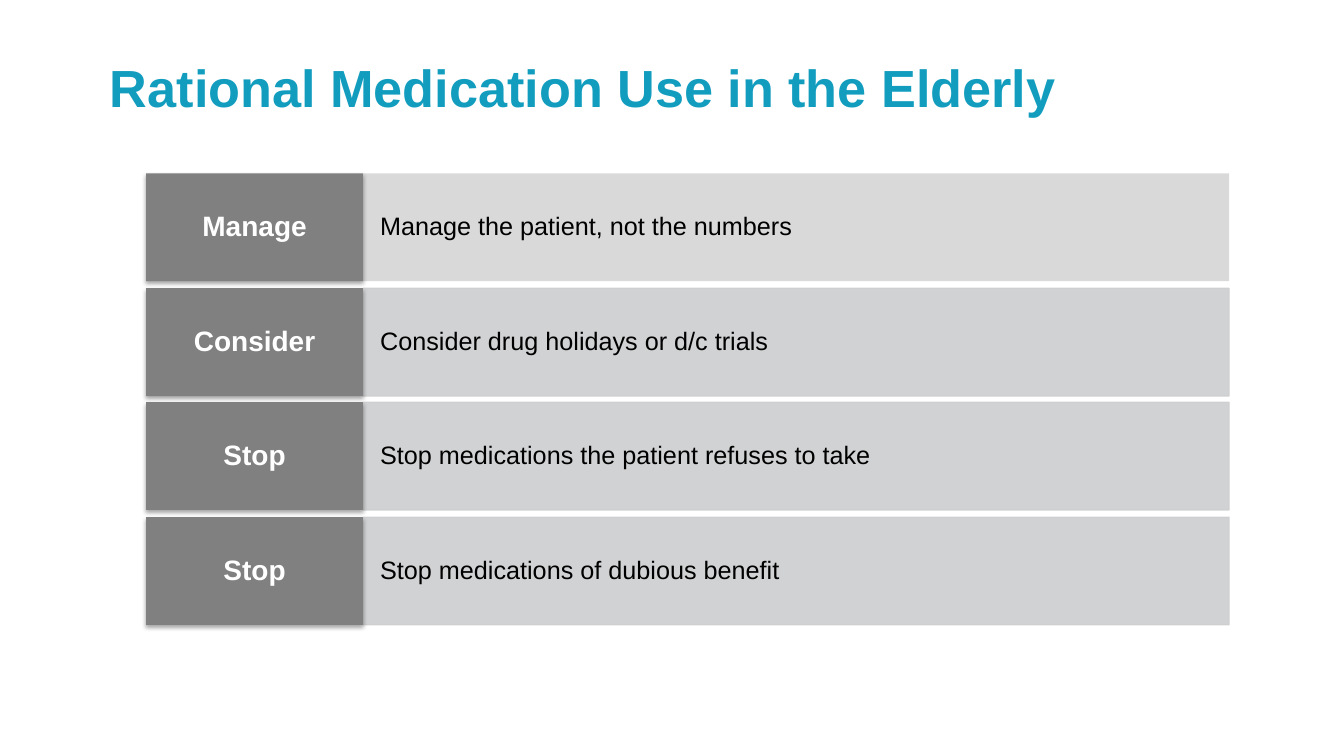
from lxml import etree
from pptx import Presentation
from pptx import util as u
from pptx.dml.color import RGBColor
from pptx.enum import shapes, text
from pptx.oxml import ns

PX = 9144
TEAL = RGBColor(0x12, 0x9D, 0xBF)
GRAY = RGBColor(0x80, 0x80, 0x80)
LIGHT = RGBColor(0xD9, 0xD9, 0xD9)
SILVER = RGBColor(0xCD, 0xCE, 0xCF)
WHITE = RGBColor(0xFF, 0xFF, 0xFF)
BLACK = RGBColor(0, 0, 0)

LABEL_LEFT, LABEL_WIDTH = 145, 215
BAND_LEFT, BAND_WIDTH = 360, 859
ROWS_TOP, ROWS_SPAN, ROW_HEIGHT = 172, 341, 107

TITLE_FONT = {"name": "Arial", "size": u.Pt(37.3), "bold": True}
LABEL_FONT = {"name": "Arial", "size": u.Pt(20), "bold": True}
BAND_FONT = {"name": "Arial", "size": u.Pt(18), "bold": False}

ROWS = [
    ("Manage", "Manage the patient, not the numbers"),
    ("Consider", "Consider drug holidays or d/c trials"),
    ("Stop", "Stop medications the patient refuses to take"),
    ("Stop", "Stop medications of dubious benefit"),
]


def place(s, left, top, width, height):
    box = {"left": left, "top": top, "width": width, "height": height}
    for name, value in box.items():
        setattr(s, name, value * PX)


def write(s, words, font, color, align, inset_x, inset_y):
    tf = s.text_frame
    frame = {
        "word_wrap": True,
        "auto_size": text.MSO_AUTO_SIZE.NONE,
        "vertical_anchor": text.MSO_ANCHOR.MIDDLE,
        "margin_left": inset_x * PX,
        "margin_right": inset_x * PX,
        "margin_top": inset_y * PX,
        "margin_bottom": inset_y * PX,
    }
    for name, value in frame.items():
        setattr(tf, name, value)
    p = tf.paragraphs[0]
    p.alignment = align
    p.line_spacing = 0.9
    r = p.add_run()
    r.text = words
    for name, value in font.items():
        setattr(r.font, name, value)
    r.font.color.rgb = color


def add_rect(slide, left, top, width, fill):
    s = slide.shapes.add_shape(
        shapes.MSO_SHAPE.RECTANGLE,
        left * PX, top * PX, width * PX, ROW_HEIGHT * PX)
    s.shadow.inherit = False
    s.fill.solid()
    s.fill.fore_color.rgb = fill
    s.line.fill.background()
    return s


def set_alpha(color, percent):
    alpha = etree.SubElement(color, ns.qn("a:alpha"))
    alpha.set("val", str(percent * 1000))


def add_drop_shadow(s):
    effects = s._element.spPr.find(ns.qn("a:effectLst"))
    shadow = etree.SubElement(
        effects, ns.qn("a:outerShdw"), blurRad=str(u.Pt(3.1)),
        dist=str(u.Pt(1.8)), dir="5400000", rotWithShape="0")
    color = etree.SubElement(shadow, ns.qn("a:srgbClr"), val=str(BLACK))
    set_alpha(color, 35)


def add_title(slide, words):
    s = slide.shapes.title
    place(s, 99, 23, 1185, 134)
    write(s, words, TITLE_FONT, TEAL, text.PP_ALIGN.LEFT, 10, 0)


def add_band(slide, top, words, outlined):
    s = add_rect(slide, BAND_LEFT, top, BAND_WIDTH,
                 SILVER if outlined else LIGHT)
    if outlined:
        s.line.color.rgb = SILVER
        s.line.width = u.Pt(0.75)
        for color in s._element.spPr.iter(ns.qn("a:srgbClr")):
            set_alpha(color, 90)
    write(s, words, BAND_FONT, BLACK, text.PP_ALIGN.LEFT, 17, 27)


def add_label(slide, top, words):
    s = add_rect(slide, LABEL_LEFT, top, LABEL_WIDTH, GRAY)
    add_drop_shadow(s)
    write(s, words, LABEL_FONT, WHITE, text.PP_ALIGN.CENTER, 11, 11)


def main():
    prs = Presentation()
    prs.slide_width = 1333 * PX
    prs.slide_height = 750 * PX
    slide = prs.slides.add_slide(prs.slide_layouts[5])
    add_title(slide, "Rational Medication Use in the Elderly")
    for i, (label, advice) in enumerate(ROWS):
        top = ROWS_TOP + round(i * ROWS_SPAN / (len(ROWS) - 1))
        add_band(slide, top, advice, outlined=i > 0)
        add_label(slide, top, label)
    prs.save("out.pptx")


if __name__ == "__main__":
    main()
